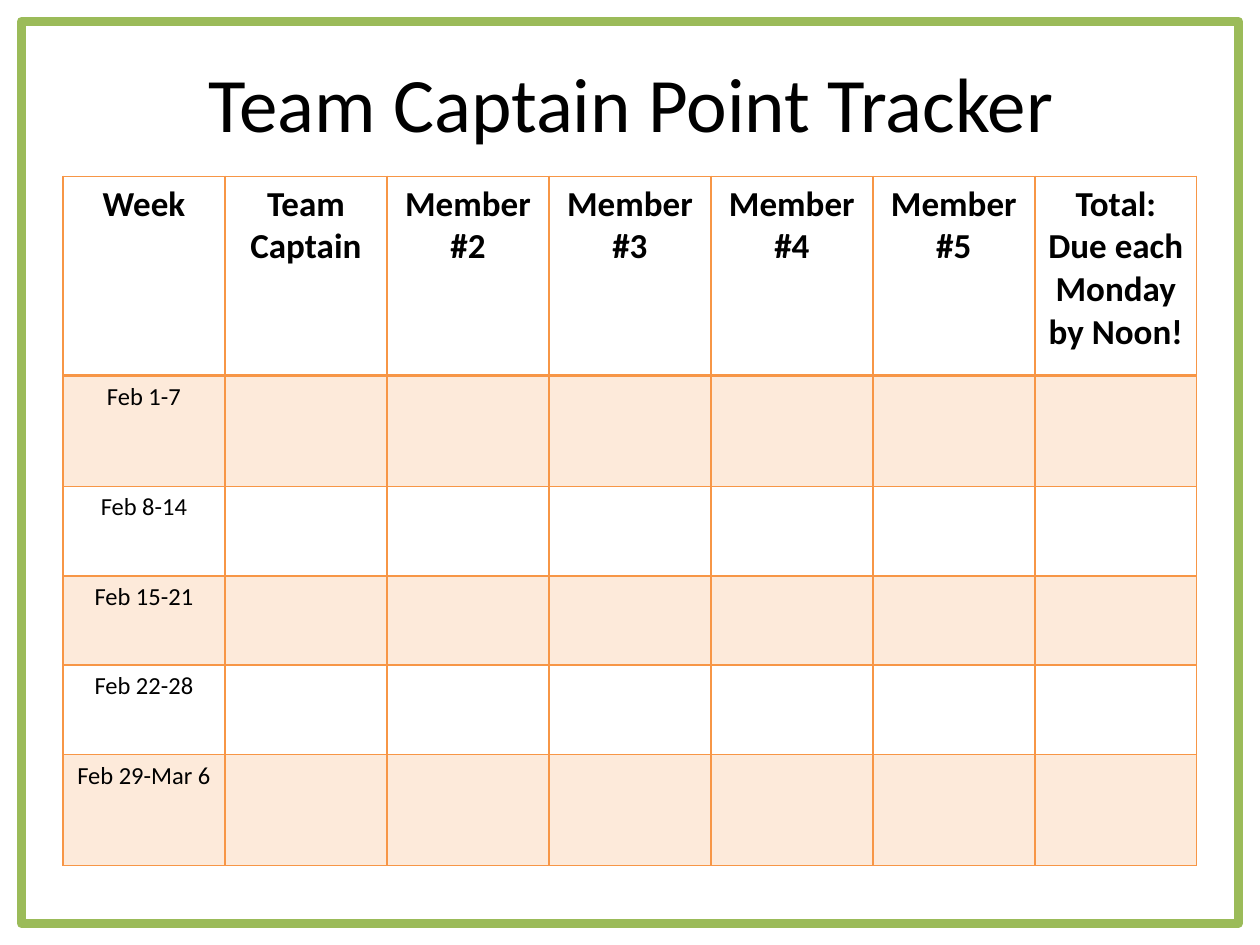
from lxml.etree import SubElement
from pptx import Presentation
from pptx.dml.color import RGBColor
from pptx.enum.shapes import MSO_SHAPE as Shape
from pptx.enum.text import MSO_ANCHOR as Anchor, PP_ALIGN as Align
from pptx.oxml.ns import qn
from pptx.util import Inches, Pt

FONT = "Calibri"
BLACK, GREEN, ORANGE = "000000", "9BBB59", "F79646"
HEADS = ["Week", "Team Captain", *(f"Member #{n}" for n in range(2, 6)),
         "Total: Due each Monday by Noon!"]
WEEKS = ["Feb 1-7", "Feb 8-14", "Feb 15-21", "Feb 22-28", "Feb 29-Mar 6"]
HEIGHTS = [1.58, 0.88, 0.71, 0.71, 0.71, 0.88]


def rgb(code):
    return RGBColor.from_string(code)


def box(*lengths):
    return [Inches(x) for x in lengths]


def write(frame, text, size, bold=False):
    para = frame.paragraphs[0]
    para.text = text
    para.alignment = Align.CENTER
    font = para.font
    font.name, font.size, font.bold = FONT, Pt(size), bold
    font.color.rgb = rgb(BLACK)


def add_frame(slide, inset):
    frame = slide.shapes.add_shape(
        Shape.RECTANGLE, *box(inset, inset, 10 - 2 * inset, 7.5 - 2 * inset))
    frame.shadow.inherit = False
    frame.fill.background()
    frame.line.color.rgb = rgb(GREEN)
    frame.line.width = Pt(5)


def add_title(slide, text):
    title = slide.shapes.title
    title.left, title.top, title.width, title.height = box(0.51, 0.34, 9, 0.94)
    title.text_frame.vertical_anchor = Anchor.MIDDLE
    write(title.text_frame, text, 44)


def edge(cell, side, width):
    """Draw one border of a cell; side is L, R, T or B."""
    props = cell._tc.get_or_add_tcPr()
    line = SubElement(props, qn(f"a:ln{side}"), w=str(Pt(width)))
    fill = SubElement(line, qn("a:solidFill"))
    SubElement(fill, qn("a:srgbClr"), val=ORANGE)


def tint(cell, percent):
    cell.fill.solid()
    cell.fill.fore_color.rgb = rgb(ORANGE)
    color = cell._tc.tcPr.find(f"{qn('a:solidFill')}/{qn('a:srgbClr')}")
    SubElement(color, qn("a:alpha"), val=str(percent * 1000))


def add_tracker(slide):
    rows, cols = len(HEIGHTS), len(HEADS)
    table = slide.shapes.add_table(
        rows, cols, *box(0.5, 1.4, 9, sum(HEIGHTS))).table
    table.first_row = table.horz_banding = False
    for row, height in zip(table.rows, HEIGHTS):
        row.height = Inches(height)
    texts = [HEADS] + [[week] + [""] * (cols - 1) for week in WEEKS]
    for r, line in enumerate(texts):
        for c, text in enumerate(line):
            cell = table.cell(r, c)
            write(cell.text_frame, text, 14 if r else 20, bold=r == 0)
            for side in "LRTB":
                heavy = (r, side) in [(0, "B"), (1, "T")]
                edge(cell, side, 2 if heavy else 1)
            if r % 2:
                tint(cell, 20)
            else:
                cell.fill.background()


def main():
    deck = Presentation()
    deck.slide_width, deck.slide_height = box(10, 7.5)
    slide = deck.slides.add_slide(deck.slide_layouts[5])
    add_frame(slide, 0.17)
    add_title(slide, "Team Captain Point Tracker")
    add_tracker(slide)
    deck.save("out.pptx")


if __name__ == "__main__":
    main()
